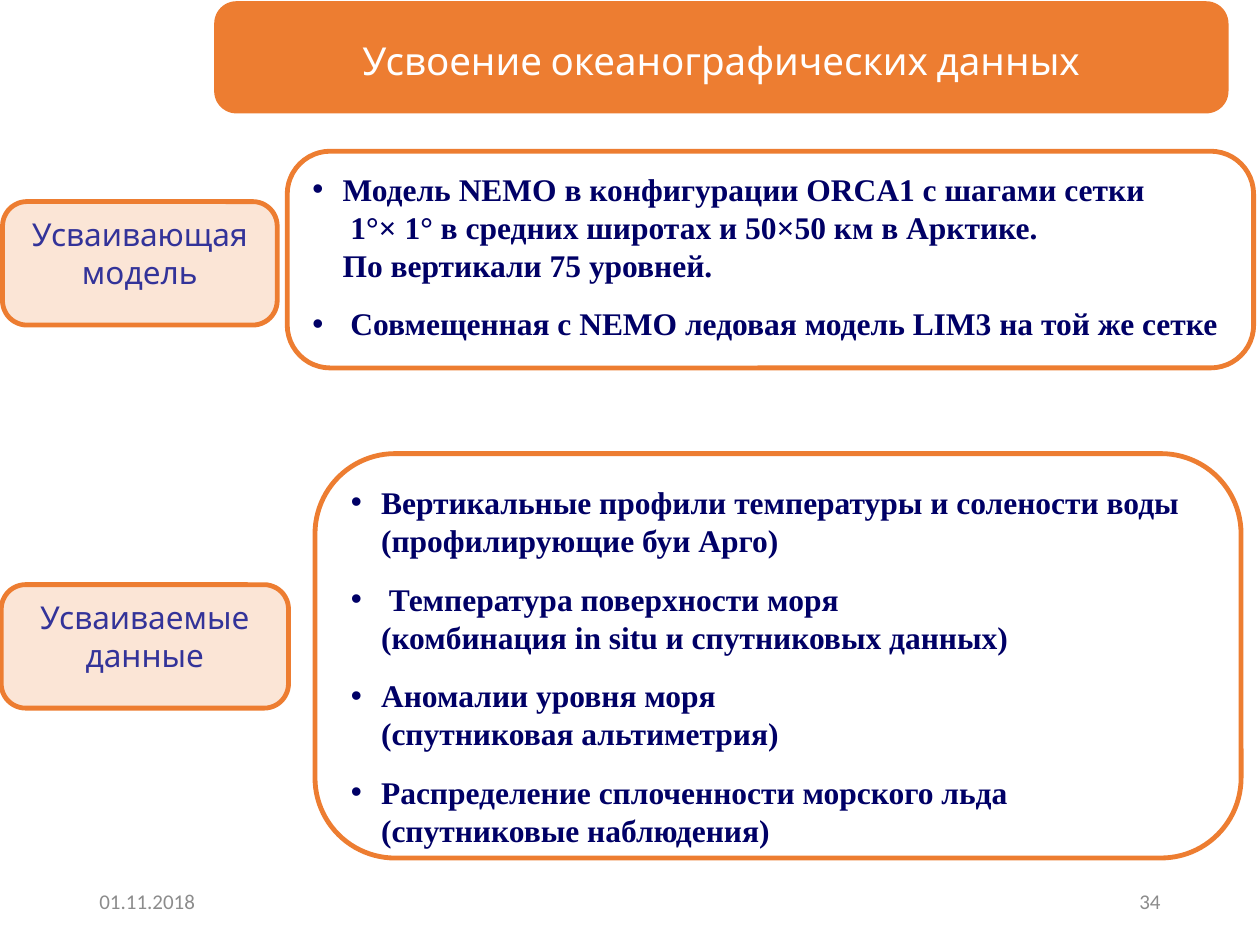
from dataclasses import dataclass

from pptx import Presentation
from pptx import util as u
from pptx.dml.color import RGBColor
from pptx.enum import shapes, text

ORANGE, PEACH, WHITE = "ED7D31", "FBE5D6", "FFFFFF"
NAVY, INDIGO, GRAY = "000066", "333399", "8C8C8C"
CORNER = 0.198
LEFT, CENTER, RIGHT = text.PP_ALIGN.LEFT, text.PP_ALIGN.CENTER, text.PP_ALIGN.RIGHT
TOP, MIDDLE = text.MSO_ANCHOR.TOP, text.MSO_ANCHOR.MIDDLE


@dataclass
class Box:
    left: float
    top: float
    width: float
    height: float

    def lengths(self):
        return [u.Inches(v) for v in (self.left, self.top, self.width, self.height)]

    def inner(self):
        """Area that stays clear of the rounded corners."""
        gap = CORNER * min(self.width, self.height) * 0.29
        return Box(self.left + gap, self.top + gap,
                   self.width - 2 * gap, self.height - 2 * gap)


@dataclass
class Section:
    label: str
    label_box: Box
    panel_box: Box
    items: list[str]


SECTIONS = [
    Section("Усваивающая модель", Box(0.02, 1.6, 2.18, 0.98), Box(2.28, 1.2, 7.67, 1.72), [
        "Модель NEMO в конфигурации ORCA1 с шагами сетки\n"
        " 1°× 1° в средних широтах и 50×50 км в Арктике.\n"
        "По вертикали 75 уровней.",
        " Совмещенная с NEMO ледовая модель LIM3 на той же сетке",
    ]),
    Section("Усваиваемые данные", Box(0.01, 4.64, 2.28, 0.98), Box(2.5, 3.6, 7.35, 3.21), [
        "Вертикальные профили температуры и солености воды (профилирующие буи Арго)",
        " Температура поверхности моря\n(комбинация in situ и спутниковых данных)",
        "Аномалии уровня моря\n(спутниковая альтиметрия)",
        "Распределение сплоченности морского льда (спутниковые наблюдения)",
    ]),
]


def color(value: str) -> RGBColor:
    return RGBColor.from_string(value)


def place(shape, box: Box):
    shape.left, shape.top, shape.width, shape.height = box.lengths()


def write(shape, paragraphs, *, size, font, ink, bold=False, align=LEFT,
          anchor=TOP, spacing=None, gap=0, hanging=None):
    frame = shape.text_frame
    frame.word_wrap = True
    frame.auto_size = text.MSO_AUTO_SIZE.NONE
    frame.vertical_anchor = anchor
    for index, content in enumerate(paragraphs):
        line = frame.paragraphs[0] if index == 0 else frame.add_paragraph()
        line.text = content
        line.alignment = align
        line.space_before = u.Pt(gap if index else 0)
        line.space_after = u.Pt(gap)
        if spacing:
            line.line_spacing = spacing
        if hanging:
            properties = line._p.get_or_add_pPr()
            properties.set("marL", str(u.Inches(hanging)))
            properties.set("indent", str(-u.Inches(hanging)))
        for run in line.runs:
            run.font.size = u.Pt(size)
            run.font.name = font
            run.font.bold = bold
            run.font.color.rgb = color(ink)


def rounded(slide, box: Box, fill: str, outlined: bool = True):
    shape = slide.shapes.add_shape(shapes.MSO_SHAPE.ROUNDED_RECTANGLE, *box.lengths())
    shape.adjustments[0] = CORNER
    shape.shadow.inherit = False
    shape.fill.solid()
    shape.fill.fore_color.rgb = color(fill)
    if outlined:
        shape.line.color.rgb = color(ORANGE)
        shape.line.width = u.Pt(2.75)
    else:
        shape.line.fill.background()
    return shape


def bring_to_front(shape):
    tree = shape._element.getparent()
    tree.append(shape._element)


def draw_section(slide, section: Section, body):
    rounded(slide, section.panel_box, WHITE)
    label = rounded(slide, section.label_box, PEACH)
    write(label, [section.label], size=18, font="Cabin", ink=INDIGO, align=CENTER)
    place(body, section.panel_box.inner())
    write(body, section.items, size=18, font="Times New Roman", ink=NAVY, bold=True,
          spacing=u.Pt(21.6), gap=6, hanging=0.24)
    bring_to_front(body)


def main():
    deck = Presentation()
    deck.slide_width, deck.slide_height = u.Inches(10), u.Inches(7.5)
    slide = deck.slides.add_slide(deck.slide_layouts[3])
    title, *bodies = slide.placeholders

    # Title on its banner
    banner = Box(1.7, 0.01, 8.05, 0.89)
    rounded(slide, banner, ORANGE, outlined=False)
    place(title, banner.inner())
    write(title, ["Усвоение океанографических данных"], size=22, font="Cabin",
          ink=WHITE, align=CENTER, spacing=1.5)
    bring_to_front(title)

    # Labels with their lists
    for section, body in zip(SECTIONS, bodies):
        draw_section(slide, section, body)

    # Date and page number
    for left, content, align in [(0.69, "01.11.2018", LEFT), (7.06, "34", RIGHT)]:
        footer = slide.shapes.add_textbox(*Box(left, 6.95, 2.25, 0.4).lengths())
        write(footer, [content], size=12, font="Calibri", ink=GRAY,
              align=align, anchor=MIDDLE)

    deck.save("out.pptx")


if __name__ == "__main__":
    main()
